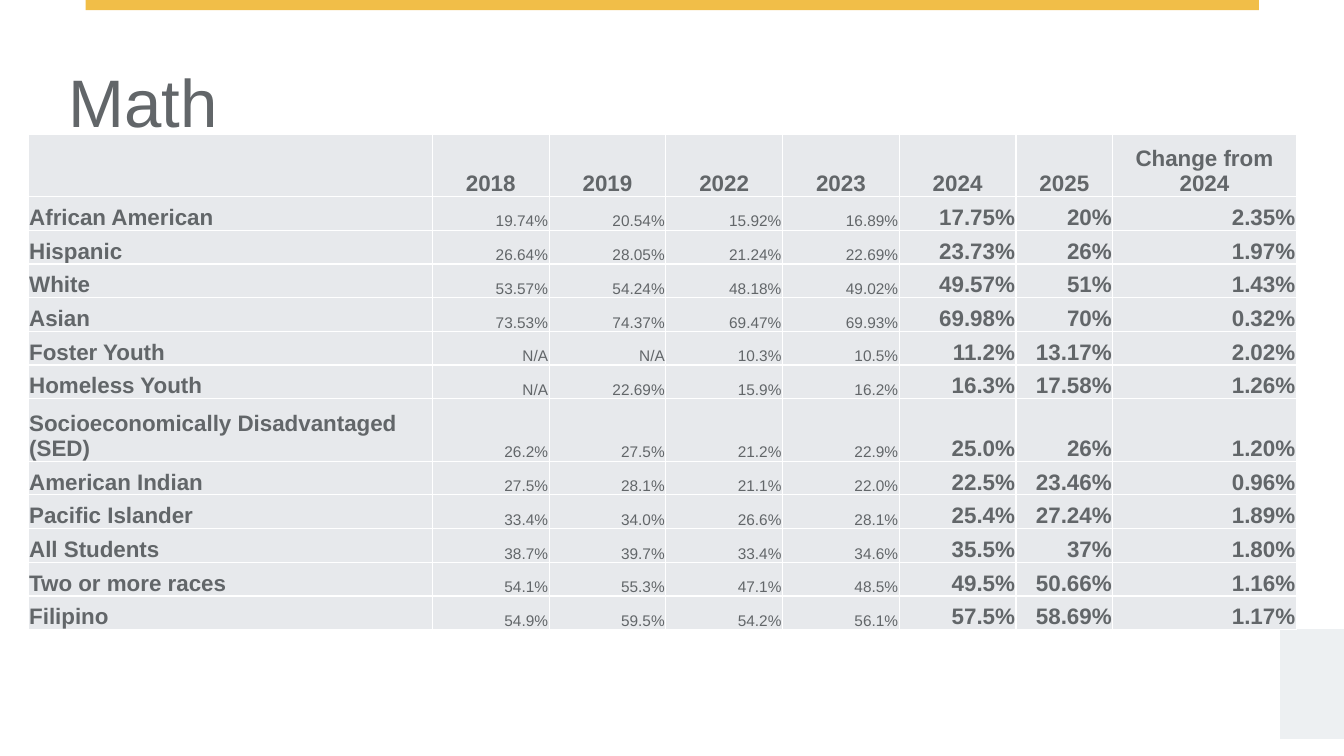
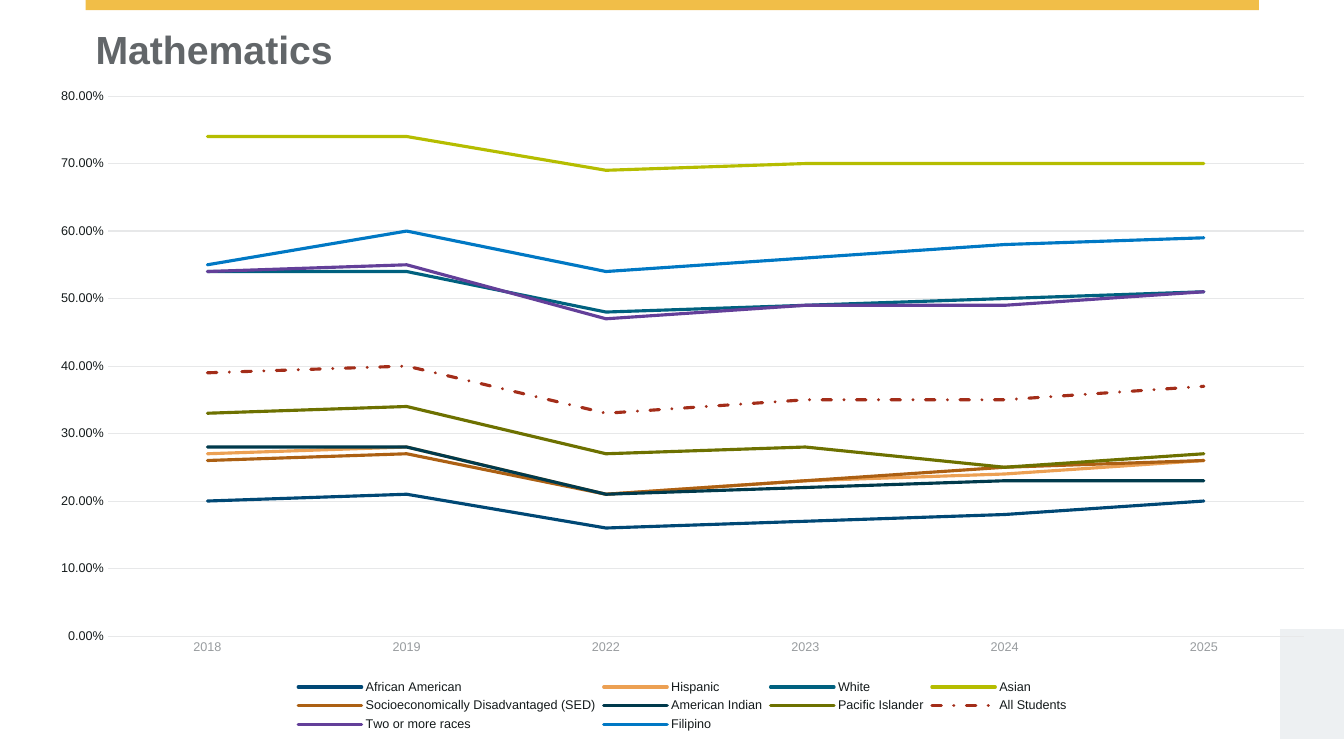
import pptx
import pptx.chart.data
import pptx.dml.color
import pptx.enum.chart
import pptx.enum.dml
import pptx.enum.shapes
import pptx.enum.text
import pptx.oxml
import pptx.oxml.ns
import pptx.util

Inches = pptx.util.Inches
Pt = pptx.util.Pt
RGBColor = pptx.dml.color.RGBColor
PP_ALIGN = pptx.enum.text.PP_ALIGN
qn = pptx.oxml.ns.qn
nsdecls = pptx.oxml.ns.nsdecls

FONT = "Arial"
WHITE = RGBColor(0xFF, 0xFF, 0xFF)
GOLD = RGBColor(0xF1, 0xBE, 0x48)
MIST = RGBColor(0xED, 0xF0, 0xF2)
CELL_GRAY = RGBColor(0xE7, 0xE9, 0xEC)
GRID_GRAY = RGBColor(0xE7, 0xE8, 0xE9)
TEXT_GRAY = RGBColor(0x62, 0x66, 0x69)
YEAR_GRAY = RGBColor(0x98, 0x9C, 0x9F)
INK = RGBColor(0x14, 0x1A, 0x1B)

YEARS = ["2018", "2019", "2022", "2023", "2024", "2025"]
CHANGE = "Change from 2024"
SED = "Socioeconomically Disadvantaged (SED)"
RESULTS = {
    "African American": ["19.74%", "20.54%", "15.92%", "16.89%", "17.75%", "20%", "2.35%"],
    "Hispanic": ["26.64%", "28.05%", "21.24%", "22.69%", "23.73%", "26%", "1.97%"],
    "White": ["53.57%", "54.24%", "48.18%", "49.02%", "49.57%", "51%", "1.43%"],
    "Asian": ["73.53%", "74.37%", "69.47%", "69.93%", "69.98%", "70%", "0.32%"],
    "Foster Youth": ["N/A", "N/A", "10.3%", "10.5%", "11.2%", "13.17%", "2.02%"],
    "Homeless Youth": ["N/A", "22.69%", "15.9%", "16.2%", "16.3%", "17.58%", "1.26%"],
    SED: ["26.2%", "27.5%", "21.2%", "22.9%", "25.0%", "26%", "1.20%"],
    "American Indian": ["27.5%", "28.1%", "21.1%", "22.0%", "22.5%", "23.46%", "0.96%"],
    "Pacific Islander": ["33.4%", "34.0%", "26.6%", "28.1%", "25.4%", "27.24%", "1.89%"],
    "All Students": ["38.7%", "39.7%", "33.4%", "34.6%", "35.5%", "37%", "1.80%"],
    "Two or more races": ["54.1%", "55.3%", "47.1%", "48.5%", "49.5%", "50.66%", "1.16%"],
    "Filipino": ["54.9%", "59.5%", "54.2%", "56.1%", "57.5%", "58.69%", "1.17%"],
}
TRENDS = {
    "African American": (RGBColor(0x00, 0x48, 0x75), [0.2, 0.21, 0.16, 0.17, 0.18, 0.2]),
    "Hispanic": (RGBColor(0xEC, 0xA0, 0x53), [0.27, 0.28, 0.21, 0.23, 0.24, 0.26]),
    "White": (RGBColor(0x00, 0x61, 0x7F), [0.54, 0.54, 0.48, 0.49, 0.5, 0.51]),
    "Asian": (RGBColor(0xB5, 0xBD, 0x00), [0.74, 0.74, 0.69, 0.7, 0.7, 0.7]),
    SED: (RGBColor(0xAC, 0x60, 0x13), [0.26, 0.27, 0.21, 0.23, 0.25, 0.26]),
    "American Indian": (RGBColor(0x00, 0x3A, 0x4C), [0.28, 0.28, 0.21, 0.22, 0.23, 0.23]),
    "Pacific Islander": (RGBColor(0x6D, 0x71, 0x00), [0.33, 0.34, 0.27, 0.28, 0.25, 0.27]),
    "All Students": (RGBColor(0xA3, 0x2D, 0x19), [0.39, 0.4, 0.33, 0.35, 0.35, 0.37]),
    "Two or more races": (RGBColor(0x63, 0x3F, 0x99), [0.54, 0.55, 0.47, 0.49, 0.49, 0.51]),
    "Filipino": (RGBColor(0x00, 0x78, 0xC4), [0.55, 0.6, 0.54, 0.56, 0.58, 0.59]),
}


def style_font(font, size, color, bold=False):
    font.name = FONT
    font.size = Pt(size)
    font.bold = bold
    font.color.rgb = color


def add_band(slide, box, color):
    band = slide.shapes.add_shape(
        pptx.enum.shapes.MSO_SHAPE.RECTANGLE, *map(Inches, box))
    band.shadow.inherit = False
    band.fill.solid()
    band.fill.fore_color.rgb = color
    band.line.fill.background()


def add_base_slide(prs):
    slide = prs.slides.add_slide(prs.slide_layouts[6])
    add_band(slide, (0.85, 0, 11.64, 0.1), GOLD)
    add_band(slide, (12.7, 6.24, 0.64, 1.09), MIST)
    return slide


def add_title(slide, box, text, size, bold=False):
    frame = slide.shapes.add_textbox(*map(Inches, box)).text_frame
    frame.word_wrap = True
    frame.auto_size = pptx.enum.text.MSO_AUTO_SIZE.SHAPE_TO_FIT_TEXT
    heading = frame.paragraphs[0]
    heading.text = text
    style_font(heading.font, size, TEXT_GRAY, bold)


def style_cell(cell, text, align, size, bold):
    properties = cell._tc.get_or_add_tcPr()
    for side in ("lnL", "lnR", "lnT", "lnB"):
        properties.append(pptx.oxml.parse_xml(
            f'<a:{side} {nsdecls("a")} w="12700"><a:solidFill>'
            f'<a:srgbClr val="{WHITE}"/></a:solidFill></a:{side}>'))
    cell.fill.solid()
    cell.fill.fore_color.rgb = CELL_GRAY
    cell.vertical_anchor = pptx.enum.text.MSO_ANCHOR.BOTTOM
    cell.margin_left = cell.margin_right = cell.margin_top = Inches(0.01)
    cell.margin_bottom = 0
    entry = cell.text_frame.paragraphs[0]
    entry.text = text
    entry.alignment = align
    style_font(entry.font, size, TEXT_GRAY, bold)


def add_results_table(slide, box):
    rows = [["", *YEARS, CHANGE]]
    rows += [[group, *values] for group, values in RESULTS.items()]
    group_width, latest_width, change_width = 4.01, 0.96, 1.82
    year_width = (box[2] - group_width - latest_width - change_width) / 5
    widths = [group_width] + [year_width] * 5 + [latest_width, change_width]
    tall_rows = (0, 1 + list(RESULTS).index(SED))
    tall = 0.62
    short = (box[3] - tall * len(tall_rows)) / (len(rows) - len(tall_rows))

    table = slide.shapes.add_table(
        len(rows), len(widths), *map(Inches, box)).table
    table.first_row = table.horz_banding = False
    for column, width in zip(table.columns, widths):
        column.width = Inches(width)
    for r, row in enumerate(rows):
        table.rows[r].height = Inches(tall if r in tall_rows else short)
        for c, text in enumerate(row):
            earlier_year = r > 0 and 1 <= c <= 4
            if c == 0:
                align = PP_ALIGN.LEFT
            else:
                align = PP_ALIGN.RIGHT if r else PP_ALIGN.CENTER
            style_cell(table.cell(r, c), text, align,
                       11 if earlier_year else 16, not earlier_year)


def set_plot_area(chart, x, y, w, h):
    plot_area = chart._chartSpace.chart.plotArea
    for layout in plot_area.findall(qn("c:layout")):
        plot_area.remove(layout)
    sizes = "".join(f'<c:{key} val="{value}"/>'
                    for key, value in zip("xywh", (x, y, w, h)))
    plot_area.insert(0, pptx.oxml.parse_xml(
        f'<c:layout {nsdecls("c")}><c:manualLayout>'
        '<c:layoutTarget val="inner"/><c:xMode val="edge"/>'
        f'<c:yMode val="edge"/>{sizes}</c:manualLayout></c:layout>'))


def style_axes(chart):
    no_tick = pptx.enum.chart.XL_TICK_MARK.NONE
    years, shares = chart.category_axis, chart.value_axis
    for axis, color in ((years, YEAR_GRAY), (shares, INK)):
        axis.major_tick_mark = axis.minor_tick_mark = no_tick
        style_font(axis.tick_labels.font, 9, color)
    shares.minimum_scale, shares.maximum_scale = 0, 0.8
    shares.major_unit = 0.1
    shares.tick_labels.number_format = "0.00%"
    shares.tick_labels.number_format_is_linked = False
    shares.format.line.fill.background()
    for rule in (years.format.line, shares.major_gridlines.format.line):
        rule.color.rgb = GRID_GRAY
        rule.width = Pt(0.75)


def add_trend_chart(slide, box):
    data = pptx.chart.data.CategoryChartData(number_format="0.00%")
    data.categories = YEARS
    for group, (_, shares) in TRENDS.items():
        data.add_series(group, shares)
    chart = slide.shapes.add_chart(
        pptx.enum.chart.XL_CHART_TYPE.LINE, *map(Inches, box), data).chart
    chart.has_title = False
    style_font(chart.font, 10, TEXT_GRAY)
    chart.has_legend = True
    chart.legend.position = pptx.enum.chart.XL_LEGEND_POSITION.BOTTOM
    chart.legend.include_in_layout = False
    style_font(chart.legend.font, 9, INK)
    style_axes(chart)
    set_plot_area(chart, 0.056, 0.031, 0.924, 0.818)

    plot = chart.plots[0]
    plot.vary_by_categories = False
    for series in plot.series:
        series.smooth = False
        line = series.format.line
        line.color.rgb = TRENDS[series.name][0]
        line.width = Pt(2.25)
        if series.name == "All Students":
            line.dash_style = pptx.enum.dml.MSO_LINE.DASH_DOT
        series._element.find(".//" + qn("a:ln")).set("cap", "rnd")


def build_table_slide(prs):
    slide = add_base_slide(prs)
    add_results_table(slide, (0.28, 1.33, 12.58, 4.92))
    add_title(slide, (0.58, 0.55, 4.71, 0.91), "Math", 48)


def build_chart_slide(prs):
    slide = add_base_slide(prs)
    add_title(slide, (0.85, 0.2, 5.62, 0.57), "Mathematics", 28, bold=True)
    add_trend_chart(slide, (0.35, 0.75, 12.84, 6.55))


def main():
    prs = pptx.Presentation()
    prs.slide_width = Inches(40 / 3)
    prs.slide_height = Inches(7.5)
    build_table_slide(prs)
    build_chart_slide(prs)
    prs.save("out.pptx")


if __name__ == "__main__":
    main()
